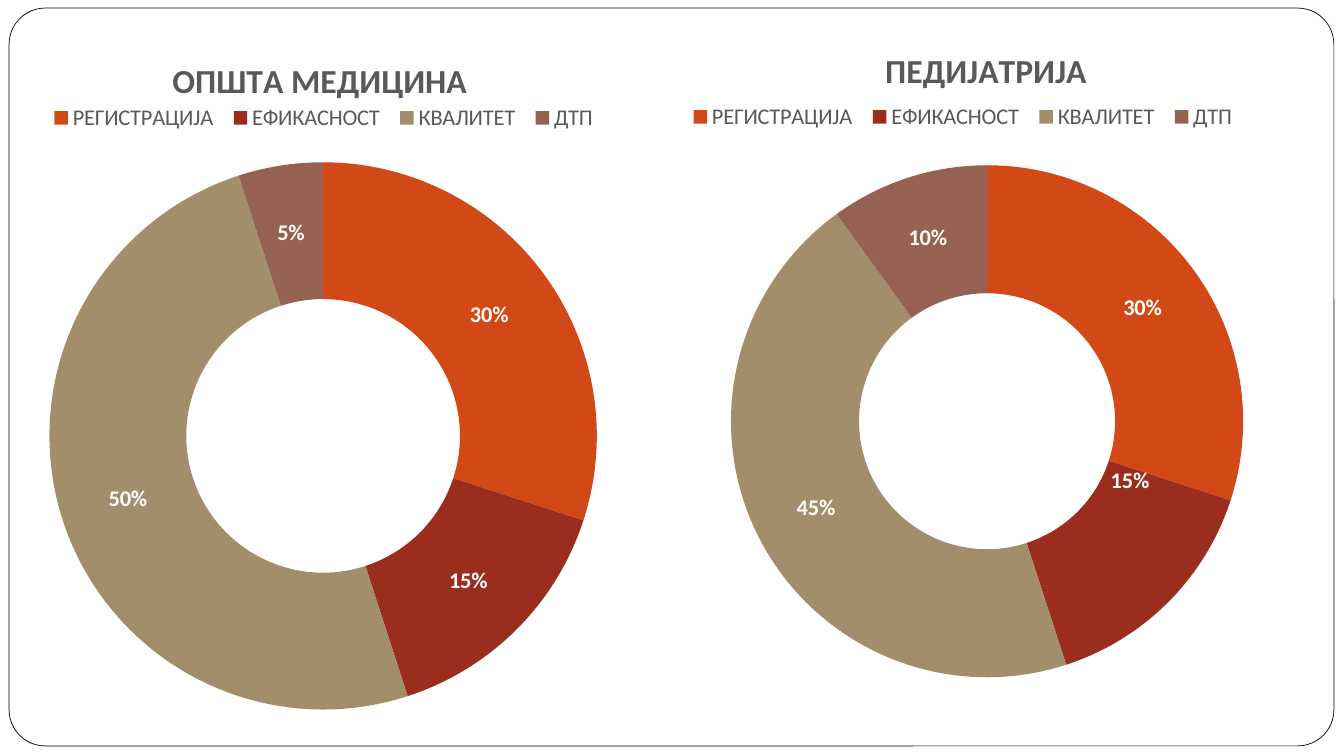
"""Build a slide with two doughnut charts of indicator shares."""
from lxml.etree import SubElement
from pptx import Presentation
from pptx.chart.data import CategoryChartData
from pptx.dml.color import RGBColor
from pptx.enum.chart import XL_CHART_TYPE, XL_LEGEND_POSITION
from pptx.enum.shapes import MSO_SHAPE
from pptx.oxml import parse_xml
from pptx.oxml.ns import nsdecls, qn
from pptx.util import Inches, Pt

CATEGORIES = ["РЕГИСТРАЦИЈА", "ЕФИКАСНОСТ", "КВАЛИТЕТ", "ДТП"]
CHARTS = [
    {
        "title": "ОПШТА МЕДИЦИНА", "series": "ОПШТА МЕДИЦИНА", "values": [30, 15, 50, 5],
        "frame": (0, 0.24, 6.4, 6.94), "title_at": (1.65, 0.52),
        "legend_at": (0.41, 0.97, 5.6, 0.4), "ring_at": (0.49, 1.61, 5.43, 5.43),
        "moved_labels": {},
    },
    {
        "title": "ПЕДИЈАТРИЈА", "series": "Series 1", "values": [30, 15, 45, 10],
        "frame": (6, 0.13, 7.52, 7.15), "title_at": (8.72, 0.42),
        "legend_at": (6.75, 0.96, 5.6, 0.4), "ring_at": (7.24, 1.64, 5.1, 5.08),
        "moved_labels": {1: (0.07, -0.75)},
    },
]
THEME = {
    "font": "Calibri", "title_size": 24, "text_size": 16,
    "text": "595959", "label": "FFFFFF", "panel": "FFFFFF", "outline": "000000",
    "slices": ["D34817", "9B2D1F", "A28E6A", "956251"],
}


def style_font(font, size=THEME["text_size"], color=THEME["text"], bold=False):
    font.name = THEME["font"]
    font.size = Pt(size)
    font.bold = bold
    font.color.rgb = RGBColor.from_string(color)


def write_text(frame, text, **style):
    span = frame.paragraphs[0].add_run()
    span.text = text
    style_font(span.font, **style)


def set_layout(element, index, fractions, edge=True, inner=False):
    for old in element.findall(qn("c:layout")):
        element.remove(old)
    layout = parse_xml(f"<c:layout {nsdecls('c')}><c:manualLayout/></c:layout>")
    settings = [("layoutTarget", "inner")] if inner else []
    if edge:
        settings += [("xMode", "edge"), ("yMode", "edge")]
    settings += [(name, f"{value:.4f}") for name, value in zip("xywh", fractions)]
    for name, value in settings:
        SubElement(layout[0], qn(f"c:{name}")).set("val", value)
    element.insert(index, layout)


def add_panel(page):
    panel = page.shapes.add_shape(
        MSO_SHAPE.ROUNDED_RECTANGLE, Inches(0.09), Inches(0.08), Inches(13.14), Inches(7.32))
    panel.adjustments[0] = 0.049
    panel.shadow.inherit = False
    panel.fill.solid()
    panel.fill.fore_color.rgb = RGBColor.from_string(THEME["panel"])
    panel.line.color.rgb = RGBColor.from_string(THEME["outline"])
    panel.line.width = Pt(0.5)


def add_doughnut(page, content):
    left, top, width, height = content["frame"]

    def fractions(area):
        starts = ((area[0] - left) / width, (area[1] - top) / height)
        return starts + tuple(size / full for size, full in zip(area[2:], (width, height)))

    data = CategoryChartData()
    data.categories = CATEGORIES
    data.add_series(content["series"], content["values"])
    chart = page.shapes.add_chart(
        XL_CHART_TYPE.DOUGHNUT, *map(Inches, content["frame"]), data).chart
    style_font(chart.font)

    chart.has_title = True
    write_text(chart.chart_title.text_frame, content["title"],
               size=THEME["title_size"], bold=True)
    chart.chart_title.include_in_layout = False
    set_layout(chart.chart_title._element, 1, fractions(content["title_at"]))

    chart.has_legend = True
    chart.legend.position = XL_LEGEND_POSITION.TOP
    chart.legend.include_in_layout = False
    style_font(chart.legend.font)
    set_layout(chart.legend._element, 1, fractions(content["legend_at"]))

    plot = chart.plots[0]
    plot.vary_by_categories = True
    set_layout(plot._element.getparent(), 0, fractions(content["ring_at"]), inner=True)
    series = plot.series[0]
    for index, color in enumerate(THEME["slices"]):
        fill = series.points[index].format.fill
        fill.solid()
        fill.fore_color.rgb = RGBColor.from_string(color)

    labels = series.data_labels
    labels.show_value = False
    labels.show_percentage = True
    labels.number_format = "0%"
    labels.number_format_is_linked = False
    style_font(labels.font, color=THEME["label"], bold=True)
    for index, (across, down) in content["moved_labels"].items():
        style_font(series.points[index].data_label.font, color=THEME["label"], bold=True)
        label = labels._element.find(qn("c:dLbl"))
        label.find(qn("c:showVal")).set("val", "0")
        label.find(qn("c:showPercent")).set("val", "1")
        set_layout(label, 1, (across / width, down / height), edge=False)


def main():
    deck = Presentation()
    deck.slide_width, deck.slide_height = Inches(13.33), Inches(7.5)
    page = deck.slides.add_slide(deck.slide_layouts[6])
    add_panel(page)
    for content in CHARTS:
        add_doughnut(page, content)
    deck.save("out.pptx")


if __name__ == "__main__":
    main()
